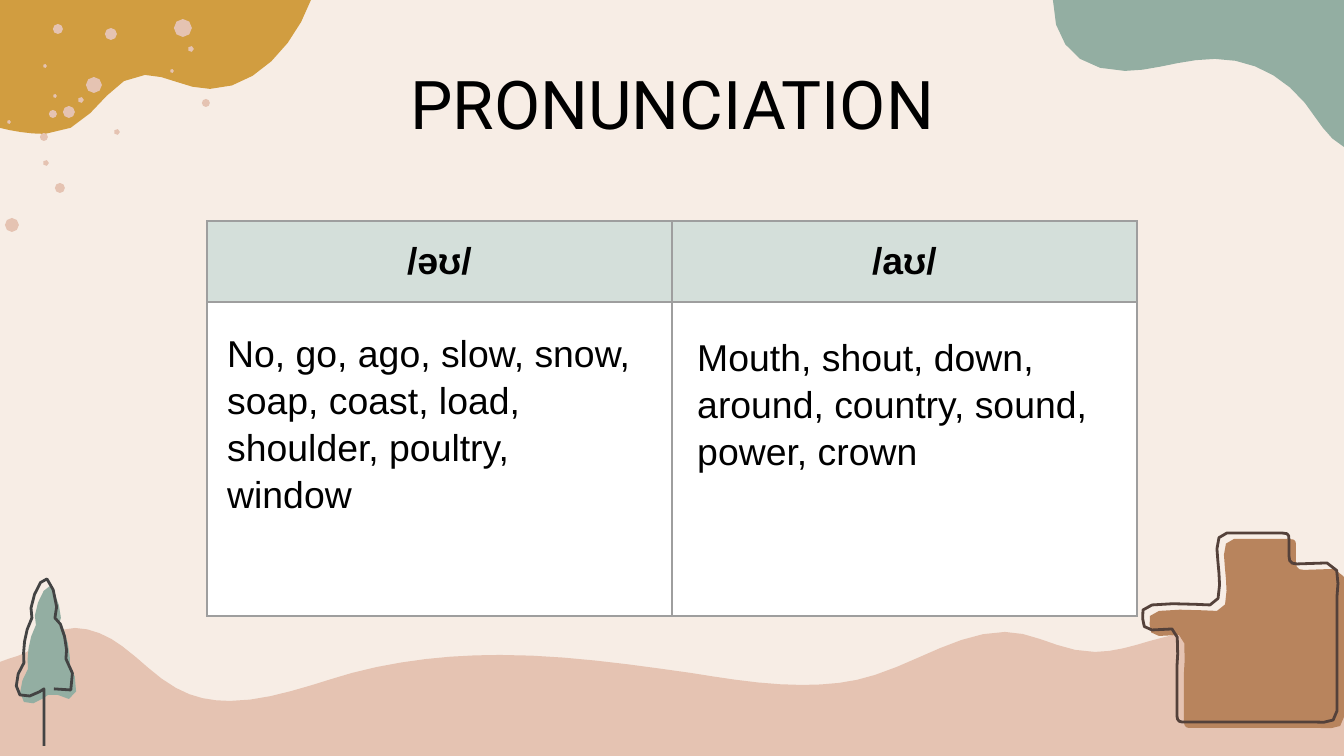
from math import cos, dist, pi, sin

from lxml.etree import SubElement
from pptx import Presentation
from pptx.dml.color import RGBColor
from pptx.enum.text import MSO_ANCHOR, PP_ALIGN
from pptx.oxml.ns import qn
from pptx.util import Emu, Pt

EMU_PER_PX = 9144000 / 1344
WIDTH, HEIGHT = 1344, 756

CREAM = RGBColor(0xF7, 0xED, 0xE5)
PINK = RGBColor(0xE5, 0xC3, 0xB2)
GREEN = RGBColor(0x93, 0xAE, 0xA2)
PALE_GREEN = RGBColor(0xD4, 0xDF, 0xDA)
GOLD = RGBColor(0xD1, 0x9D, 0x40)
BROWN = RGBColor(0xB8, 0x84, 0x5D)
DARK_BROWN = RGBColor(0x54, 0x41, 0x3A)
CHARCOAL = RGBColor(0x43, 0x43, 0x43)
GRAY = RGBColor(0x9E, 0x9E, 0x9E)
WHITE = RGBColor(0xFF, 0xFF, 0xFF)
BLACK = RGBColor(0x00, 0x00, 0x00)

HILLS = [
    (0, 662), (9, 658, 18, 657, 27, 652), (38, 640, 55, 628, 75, 628),
    (91, 628, 109, 636, 122, 646), (141, 660, 156, 677, 176, 688),
    (194, 698, 211, 701, 230, 701), (270, 701, 313, 684, 352, 673),
    (401, 660, 450, 655, 500, 655), (563, 655, 628, 664, 691, 673),
    (728, 679, 766, 685, 802, 685), (827, 685, 851, 683, 875, 675),
    (919, 661, 961, 632, 1005, 632), (1036, 632, 1060, 652, 1095, 652),
    (1114, 652, 1133, 646, 1150, 641), (1164, 637, 1200, 628, 1222, 628),
    (1257, 628, 1293, 637, 1344, 647), (WIDTH, HEIGHT), (0, HEIGHT),
]
GOLD_CORNER = [
    (0, 0), (311, 0), (295, 45, 255, 89, 210, 89), (185, 89, 168, 75, 145, 75),
    (105, 75, 95, 134, 45, 134), (28, 134, 12, 131, 0, 128),
]
GREEN_CORNER = [
    (1053, 0), (1053, 45, 1080, 71, 1125, 71), (1155, 71, 1182, 59, 1215, 59),
    (1250, 59, 1282, 75, 1305, 103), (1318, 120, 1327, 138, 1344, 147), (WIDTH, 0),
]
TREE = [
    (50, 586), (42, 586, 31, 617, 36, 625), (28, 640, 27, 657, 28, 669),
    (22, 679, 16, 695, 24, 702), (31, 709, 48, 695, 48, 695),
    (58, 695), (69, 699), (82, 699, 75, 671, 70, 665),
    (71, 659, 67, 626, 59, 625), (65, 621, 56, 590, 50, 586),
]
TREE_OUTLINE = [
    (44, 746), (44, 689), (44, 689, 28, 701, 20, 695), (13, 689, 17, 672, 24, 663),
    (23, 651, 24, 633, 32, 618), (27, 610, 39, 576, 47, 579),
    (54, 583, 60, 614, 55, 618), (63, 620, 69, 652, 66, 659),
    (74, 665, 81, 706, 54, 689),
]
CACTUS = [
    (1177, 716), (1177, 667), (1177, 660, 1181, 629, 1172, 629), (1152, 630),
    (1140, 630, 1143, 618, 1143, 610), (1143, 600, 1200, 605, 1210, 605),
    (1223, 605, 1219, 581, 1219, 573), (1219, 562, 1211, 533, 1227, 533),
    (1282, 533), (1289, 533, 1289, 535, 1289, 540), (1289, 556),
    (1289, 562, 1291, 564, 1297, 564), (1327, 563),
    (1343, 566, 1337, 585, 1337, 597), (1337, 711),
    (1337, 725, 1324, 722, 1312, 722), (1182, 722),
    (1179, 722, 1177, 720, 1177, 716),
]
SPECKLES = [
    (58, 29, 5), (111, 34, 6), (183, 28, 9), (191, 49, 3), (45, 66, 2),
    (172, 71, 2), (94, 85, 8), (55, 96, 2), (81, 100, 3), (53, 114, 4),
    (69, 112, 6), (206, 103, 4), (9, 122, 2), (44, 137, 4), (117, 132, 3),
    (46, 163, 3), (60, 188, 5), (12, 225, 7),
]


def px(length):
    return Emu(round(length * EMU_PER_PX))


def flatten(path):
    points = [path[0]]
    for segment in path[1:]:
        if len(segment) == 2:
            points.append(segment)
            continue
        corners = [points[-1], segment[:2], segment[2:4], segment[4:]]
        steps = min(6, 3 + int(dist(corners[0], corners[3]) / 40))
        for step in range(1, steps + 1):
            t = step / steps
            weights = ((1 - t) ** 3, 3 * t * (1 - t) ** 2, 3 * t * t * (1 - t), t ** 3)
            points.append(tuple(
                sum(w * corner[axis] for w, corner in zip(weights, corners))
                for axis in (0, 1)))
    return points


def circle(x, y, radius):
    sides = 8 if radius > 3 else 5
    angles = [2 * pi * side / sides for side in range(sides)]
    return [(x + radius * cos(a), y + radius * sin(a)) for a in angles]


def add_freeform(slide, contours, fill=None, line=None, closed=True):
    contours = [[(px(x), px(y)) for x, y in contour] for contour in contours]
    builder = slide.shapes.build_freeform(*contours[0][0], scale=1.0)
    for index, contour in enumerate(contours):
        if index:
            builder.move_to(*contour[0])
        builder.add_line_segments(contour[1:], close=closed)
    shape = builder.convert_to_shape()
    shape.shadow.inherit = False
    if fill is None:
        shape.fill.background()
    else:
        shape.fill.solid()
        shape.fill.fore_color.rgb = fill
    if line is None:
        shape.line.fill.background()
    else:
        shape.line.color.rgb = line
        shape.line.width = Pt(1.5)


def write_text(text_frame, text, size, font="Arial", bold=False, alignment=PP_ALIGN.LEFT):
    text_frame.text = text
    paragraph = text_frame.paragraphs[0]
    paragraph.alignment = alignment
    run_font = paragraph.runs[0].font
    run_font.name, run_font.size, run_font.bold = font, Pt(size), bold
    run_font.color.rgb = BLACK


def add_title(slide, text):
    title = slide.shapes.title
    title.left, title.top, title.width, title.height = px(106), px(67), px(1133), px(72)
    title.text_frame.vertical_anchor = MSO_ANCHOR.MIDDLE
    write_text(title.text_frame, text, 36, font="Roboto", alignment=PP_ALIGN.CENTER)


def add_word_list(slide, left, top, height, words):
    text_frame = slide.shapes.add_textbox(px(left), px(top), px(435), px(height)).text_frame
    text_frame.word_wrap = True
    write_text(text_frame, words, 20)
    text_frame.paragraphs[0].line_spacing = 1.05


def style_cell(cell, fill):
    properties = cell._tc.get_or_add_tcPr()
    for side in ("lnL", "lnR", "lnT", "lnB"):
        border = SubElement(properties, qn(f"a:{side}"), w=str(int(Pt(0.75))))
        color = SubElement(border, qn("a:solidFill"))
        SubElement(color, qn("a:srgbClr"), val=str(GRAY))
    cell.fill.solid()
    cell.fill.fore_color.rgb = fill


def add_sound_table(slide, sounds):
    frame = slide.shapes.add_table(2, 2, px(207), px(221), px(930), px(395))
    table = frame.table
    table.first_row = table.horz_banding = False
    table.rows[0].height, table.rows[1].height = px(81), px(314)
    for column, sound in enumerate(sounds):
        header = table.cell(0, column)
        write_text(header.text_frame, sound, 20, bold=True, alignment=PP_ALIGN.CENTER)
        header.vertical_anchor = MSO_ANCHOR.MIDDLE
        style_cell(header, PALE_GREEN)
        style_cell(table.cell(1, column), WHITE)


def add_scenery(slide):
    add_freeform(slide, [flatten(HILLS)], fill=PINK)
    add_freeform(slide, [flatten(TREE)], fill=GREEN)
    add_freeform(slide, [flatten(TREE_OUTLINE)], line=CHARCOAL, closed=False)
    cactus = flatten(CACTUS)
    add_freeform(slide, [[(x + 7, y + 6) for x, y in cactus]], fill=BROWN)
    add_freeform(slide, [cactus], line=DARK_BROWN)
    add_freeform(slide, [flatten(GREEN_CORNER)], fill=GREEN)
    add_freeform(slide, [flatten(GOLD_CORNER)], fill=GOLD)
    add_freeform(slide, [circle(*speckle) for speckle in SPECKLES], fill=PINK)


def main():
    presentation = Presentation()
    presentation.slide_width, presentation.slide_height = px(WIDTH), px(HEIGHT)
    slide = presentation.slides.add_slide(presentation.slide_layouts[5])
    slide.background.fill.solid()
    slide.background.fill.fore_color.rgb = CREAM
    add_scenery(slide)
    add_title(slide, "PRONUNCIATION")
    add_sound_table(slide, ["/əʊ/", "/aʊ/"])
    add_word_list(slide, 214, 321, 195,
                  "No, go, ago, slow, snow, soap, coast, load, shoulder, poultry, window")
    add_word_list(slide, 684, 325, 149,
                  "Mouth, shout, down, around, country, sound, power, crown")
    presentation.save("out.pptx")


if __name__ == "__main__":
    main()
